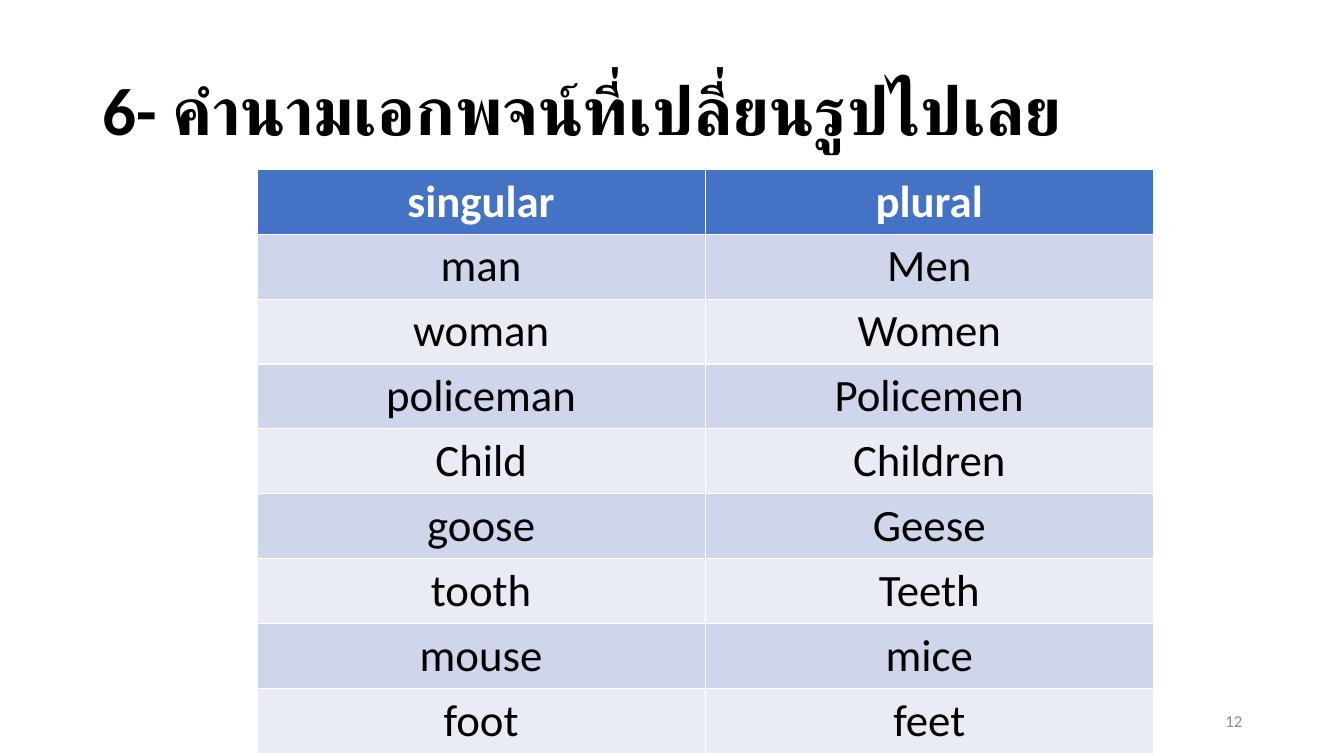
"""Build a slide with a table of irregular plural nouns."""
from typing import NamedTuple

from pptx import Presentation
from pptx import util as u
from pptx.dml import color
from pptx.enum import text

HUES = {"head": "4472C4", "odd": "CFD5EA", "even": "E9EBF5",
        "white": "FFFFFF", "black": "000000", "gray": "8C8C8C"}
FONT = "Calibri"


class Noun(NamedTuple):
    one: str
    many: str


HEAD = Noun("singular", "plural")
NOUNS = [
    Noun("man", "Men"),
    Noun("woman", "Women"),
    Noun("policeman", "Policemen"),
    Noun("Child", "Children"),
    Noun("goose", "Geese"),
    Noun("tooth", "Teeth"),
    Noun("mouse", "mice"),
    Noun("foot", "feet"),
]


def rgb(name: str) -> color.RGBColor:
    return color.RGBColor.from_string(HUES[name])


def write(frame, words: str, size: int, hue: str, align, bold: bool = False) -> None:
    frame.text = words
    line = frame.paragraphs[0]
    line.alignment = align
    for run in line.runs:
        run.font.name = FONT
        run.font.size = u.Pt(size)
        run.font.bold = bold
        run.font.color.rgb = rgb(hue)


def add_title(slide, words: str) -> None:
    title = slide.shapes.title
    title.left, title.top = u.Inches(0.92), u.Inches(0.4)
    title.width, title.height = u.Inches(11.5), u.Inches(1.45)
    frame = title.text_frame
    write(frame, words, 48, "black", text.PP_ALIGN.LEFT, True)
    frame.vertical_anchor = text.MSO_ANCHOR.MIDDLE
    frame.paragraphs[0].line_spacing = 0.9


def add_nouns(slide, nouns: list[Noun]) -> None:
    rows = [HEAD, *nouns]
    table = slide.shapes.add_table(
        len(rows), 2, u.Inches(2.55), u.Inches(1.68),
        u.Inches(8.89), u.Inches(0.64 * len(rows))).table
    for r, noun in enumerate(rows):
        top = r == 0
        fill = "head" if top else "odd" if r % 2 else "even"
        for c, word in enumerate(noun):
            cell = table.cell(r, c)
            cell.fill.solid()
            cell.fill.fore_color.rgb = rgb(fill)
            write(cell.text_frame, word, 32, "white" if top else "black",
                  text.PP_ALIGN.CENTER, top)


def add_page(slide, number: str) -> None:
    box = slide.shapes.add_textbox(
        u.Inches(9.42), u.Inches(6.95), u.Inches(3), u.Inches(0.4))
    frame = box.text_frame
    frame.word_wrap = True
    frame.vertical_anchor = text.MSO_ANCHOR.MIDDLE
    write(frame, number, 12, "gray", text.PP_ALIGN.RIGHT)


def main() -> None:
    deck = Presentation()
    deck.slide_width, deck.slide_height = u.Inches(13.33), u.Inches(7.5)
    slide = deck.slides.add_slide(deck.slide_layouts[5])
    add_title(slide, "6- คำนามเอกพจน์ที่เปลี่ยนรูปไปเลย")
    add_nouns(slide, NOUNS)
    add_page(slide, "12")
    deck.save("out.pptx")


if __name__ == "__main__":
    main()
